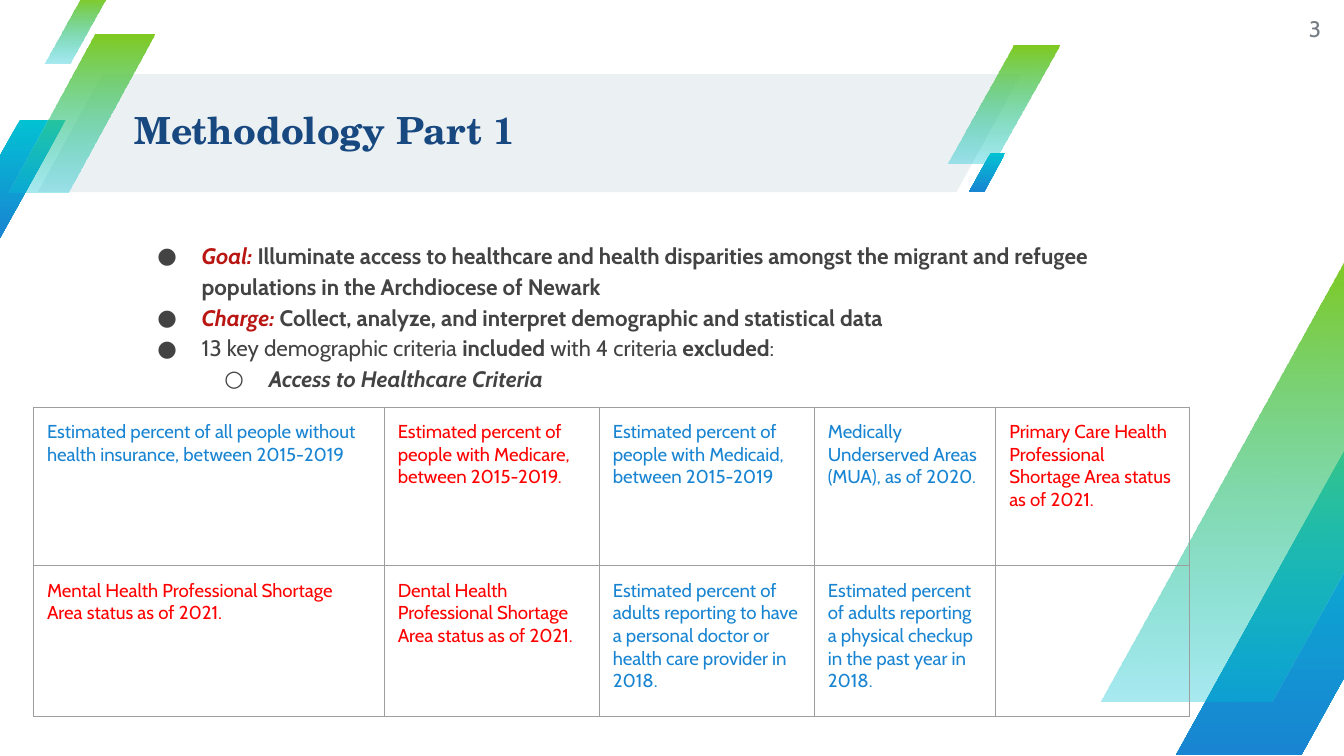
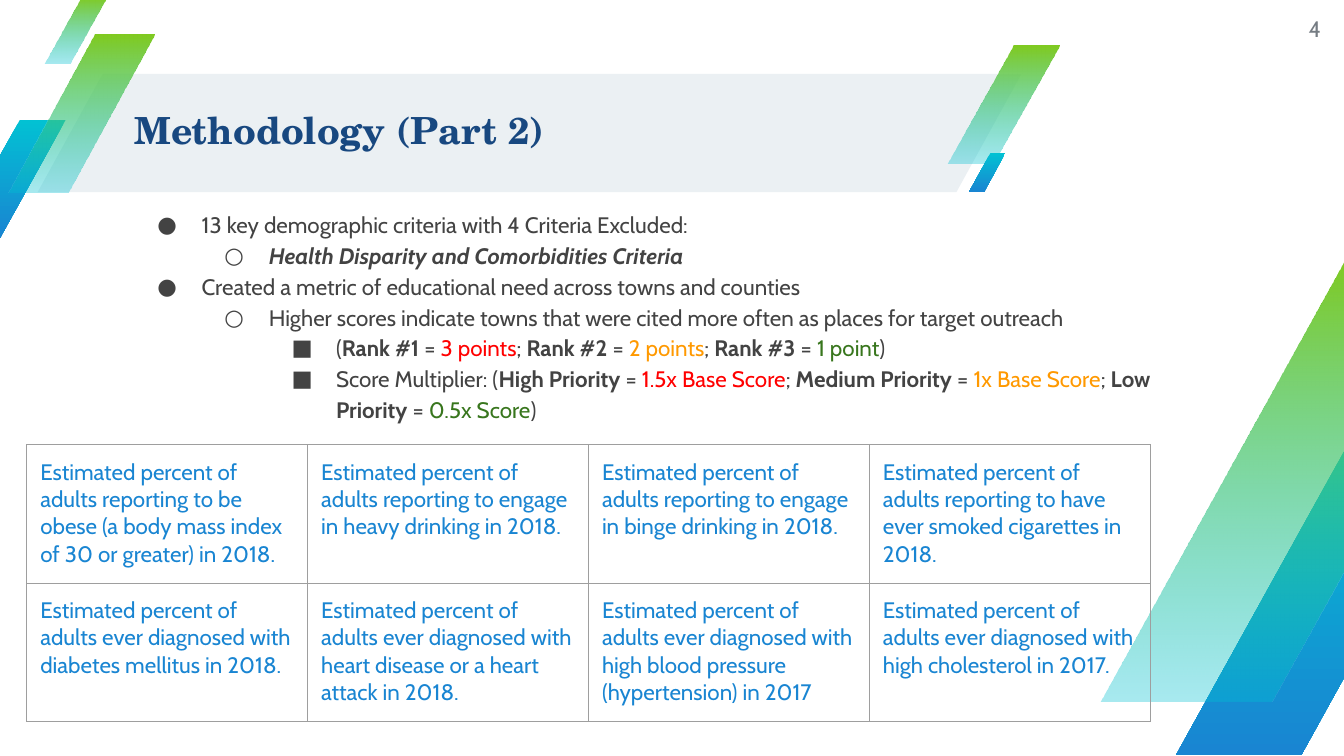
"""Build the two methodology slides: shared slanted bands, bulleted notes and criteria tables."""
import lxml.etree
import pptx
import pptx.dml.color
import pptx.enum.shapes
import pptx.enum.text
import pptx.oxml.ns
import pptx.util

PX = 9144
BODY_FONT, TITLE_FONT = "Cabin", "TeX Gyre Schola"
NAVY, BLUE, TEAL, LIME = "184880", "1985D2", "02C1D3", "7FCA20"
INK, GREY, BORDER, BAND = "434343", "757C83", "9E9E9E", "EBF0F3"
CRIMSON, RED, ORANGE, GREEN = "B91512", "FF0000", "FF9900", "38761D"

SLANT = 0.59
DEEP, FADING = (TEAL, BLUE, 100), (LIME, TEAL, 34)
stripes = [
    (-34, 89, 83, 88, DEEP),
    (705, 34, 83, 88, FADING),
    (6, 26, 109, 117, FADING),
    (33, -2, 46, 49, FADING),
    (721, 114, 27, 29, DEEP),
    (875, 320, 227, 242, DEEP),
    (819, 192, 310, 330, FADING),
]
bullets = "●○■"

pages = [
    {
        "number": "3",
        "title": "Methodology Part 1",
        "notes_box": (100, 177, 765, 328),
        "notes": [
            (0, [("Goal: ", "bi", CRIMSON),
                 ("Illuminate access to healthcare and health disparities amongst the migrant "
                  "and refugee populations in the Archdiocese of Newark", "b", INK)]),
            (0, [("Charge:", "bi", CRIMSON),
                 (" Collect, analyze, and interpret demographic and statistical data", "b", INK)]),
            (0, [("13 key demographic criteria ", "", INK), ("included", "b", INK),
                 (" with 4 criteria ", "", INK), ("excluded", "b", INK), (":", "", INK)]),
            (1, [("Access to Healthcare Criteria", "bi", INK)]),
        ],
        "table_at": (25, 303),
        "columns": [261, 160, 160, 135, 144],
        "rows": [118, 112],
        "text_size": 10,
        "criteria": [
            [("Estimated percent of all people without health insurance, between 2015-2019", BLUE),
             ("Estimated percent of people with Medicare, between 2015-2019.", RED),
             ("Estimated percent of people with Medicaid, between 2015-2019", BLUE),
             ("Medically Underserved Areas (MUA), as of 2020.", BLUE),
             ("Primary Care Health Professional Shortage Area status as of 2021.", RED)],
            [("Mental Health Professional Shortage Area status as of 2021.", RED),
             ("Dental Health Professional Shortage Area status as of 2021.", RED),
             ("Estimated percent of adults reporting to have a personal doctor or health care "
              "provider in 2018.", BLUE),
             ("Estimated percent of adults reporting a physical checkup in the past year in 2018.",
              BLUE),
             ("", BLUE)],
        ],
    },
    {
        "number": "4",
        "title": "Methodology (Part 2)",
        "notes_box": (100, 154, 765, 157),
        "notes": [
            (0, [("13 key demographic criteria with 4 Criteria Excluded:", "", INK)]),
            (1, [("Health Disparity and Comorbidities Criteria", "bi", INK)]),
            (0, [("Created a metric of educational need across towns and counties", "", INK)]),
            (1, [("Higher scores indicate towns that were cited more often as places for target "
                  "outreach", "", INK)]),
            (2, [("(", "", INK), ("Rank #1", "b", INK), (" = ", "", INK), ("3 points", "", RED),
                 ("; ", "", INK), ("Rank #2 ", "b", INK), ("= ", "", INK),
                 ("2 points", "", ORANGE), ("; ", "", INK), ("Rank #3", "b", INK),
                 (" = ", "", INK), ("1 point", "", GREEN), (")", "", INK)]),
            (2, [("Score Multiplier: (", "", INK), ("High Priority", "b", INK), (" = ", "", INK),
                 ("1.5x Base Score", "", RED), ("; ", "", INK), ("Medium Priority ", "b", INK),
                 ("= ", "", INK), ("1x Base Score", "", ORANGE), ("; ", "", INK),
                 ("Low Priority", "b", INK), (" = ", "", INK), ("0.5x Score", "", GREEN),
                 (")", "", INK)]),
        ],
        "table_at": (20, 331),
        "columns": [209] * 4,
        "rows": [103] * 2,
        "text_size": 12,
        "criteria": [
            [("Estimated percent of adults " + ending, BLUE) for ending in (
                "reporting to be obese (a body mass index of 30 or greater) in 2018.",
                "reporting to engage in heavy drinking in 2018.",
                "reporting to engage in binge drinking in 2018.",
                "reporting to have ever smoked cigarettes in 2018.")],
            [("Estimated percent of adults ever diagnosed with " + ending, BLUE) for ending in (
                "diabetes mellitus in 2018.",
                "heart disease or a heart attack in 2018.",
                "high blood pressure (hypertension) in 2017",
                "high cholesterol in 2017.")],
        ],
    },
]


def rgb(value):
    return pptx.dml.color.RGBColor.from_string(value)


def place(box, left, top, width, height, anchor):
    box.left, box.top, box.width, box.height = (n * PX for n in (left, top, width, height))
    frame = box.text_frame
    frame.margin_left = frame.margin_top = frame.margin_right = frame.margin_bottom = 0
    frame.word_wrap = True
    frame.auto_size = pptx.enum.text.MSO_AUTO_SIZE.NONE
    frame.vertical_anchor = anchor
    return frame


TOP, MIDDLE = pptx.enum.text.MSO_ANCHOR.TOP, pptx.enum.text.MSO_ANCHOR.MIDDLE
PARALLELOGRAM = pptx.enum.shapes.MSO_SHAPE.PARALLELOGRAM
qn = pptx.oxml.ns.qn

deck = pptx.Presentation()
deck.slide_width = 1000 * PX
deck.slide_height = deck.slide_width * 9 // 16

for page in pages:
    slide = deck.slides.add_slide(deck.slide_layouts[5])
    title = slide.shapes.title

    band = slide.shapes.add_shape(PARALLELOGRAM, 28 * PX, 55 * PX, 732 * PX, 88 * PX)
    band.adjustments[0] = 0.55
    band.shadow.inherit = False
    band.fill.solid()
    band.fill.fore_color.rgb = rgb(BAND)
    band.line.fill.background()

    for left, top, width, height, (start, end, opacity) in stripes:
        stripe = slide.shapes.add_shape(
            PARALLELOGRAM, left * PX, top * PX, width * PX, height * PX)
        stripe.adjustments[0] = SLANT
        stripe.shadow.inherit = False
        stripe.line.fill.background()
        stripe.fill.gradient()
        stripe.fill.gradient_angle = 270
        for stop, shade in zip(stripe.fill.gradient_stops, (start, end)):
            stop.color.rgb = rgb(shade)
        if opacity < 100:
            end_color = stripe.element.xpath(".//a:gs[2]/a:srgbClr")[0]
            lxml.etree.SubElement(end_color, qn("a:alpha"), val=str(opacity * 1000))

    notes = place(slide.shapes.add_textbox(0, 0, 0, 0), *page["notes_box"], TOP)
    for index, (level, runs) in enumerate(page["notes"]):
        note = notes.add_paragraph() if index else notes.paragraphs[0]
        note.level = level
        note.line_spacing = 1.15
        properties = note._p.get_or_add_pPr()
        properties.set("marL", str(50 * (level + 1) * PX))
        properties.set("indent", str(-33 * PX))
        bullet_color = lxml.etree.SubElement(properties, qn("a:buClr"))
        lxml.etree.SubElement(bullet_color, qn("a:srgbClr"), val=INK)
        lxml.etree.SubElement(properties, qn("a:buFont"), typeface=BODY_FONT)
        lxml.etree.SubElement(properties, qn("a:buChar"), char=bullets[level])
        note.font.name = BODY_FONT
        note.font.size = pptx.util.Pt(12)
        for words, style, color in runs:
            run = note.add_run()
            run.text = words
            run.font.bold = "b" in style
            run.font.italic = "i" in style
            run.font.color.rgb = rgb(color)

    page_number = place(slide.shapes.add_textbox(0, 0, 0, 0), 936, 0, 47, 43, MIDDLE).paragraphs[0]
    page_number.text = page["number"]
    page_number.alignment = pptx.enum.text.PP_ALIGN.RIGHT
    page_number.font.name = BODY_FONT
    page_number.font.size = pptx.util.Pt(12)
    page_number.font.color.rgb = rgb(GREY)

    title.element.getparent().append(title.element)
    heading = place(title, 100, 54, 659, 89, MIDDLE).paragraphs[0]
    heading.text = page["title"]
    heading.alignment = pptx.enum.text.PP_ALIGN.LEFT
    heading.line_spacing = 0.9
    heading.font.name = TITLE_FONT
    heading.font.size = pptx.util.Pt(20)
    heading.font.bold = True
    heading.font.color.rgb = rgb(NAVY)

    left, top = page["table_at"]
    columns, rows = page["columns"], page["rows"]
    criteria = slide.shapes.add_table(
        len(rows), len(columns), left * PX, top * PX, sum(columns) * PX, sum(rows) * PX).table
    criteria.first_row = criteria.horz_banding = False
    for column, width in zip(criteria.columns, columns):
        column.width = width * PX
    for row, height, entries in zip(criteria.rows, rows, page["criteria"]):
        row.height = height * PX
        for cell, (words, color) in zip(row.cells, entries):
            cell.margin_left = cell.margin_right = 10 * PX
            cell.margin_top = cell.margin_bottom = 10 * PX
            for side in ("a:lnL", "a:lnR", "a:lnT", "a:lnB"):
                edge = lxml.etree.SubElement(
                    cell._tc.get_or_add_tcPr(), qn(side), w=str(pptx.util.Pt(0.75)))
                edge_fill = lxml.etree.SubElement(edge, qn("a:solidFill"))
                lxml.etree.SubElement(edge_fill, qn("a:srgbClr"), val=BORDER)
            cell.fill.background()
            criterion = cell.text_frame.paragraphs[0]
            criterion.text = words
            criterion.font.name = BODY_FONT
            criterion.font.size = pptx.util.Pt(page["text_size"])
            criterion.font.color.rgb = rgb(color)

deck.save("out.pptx")
